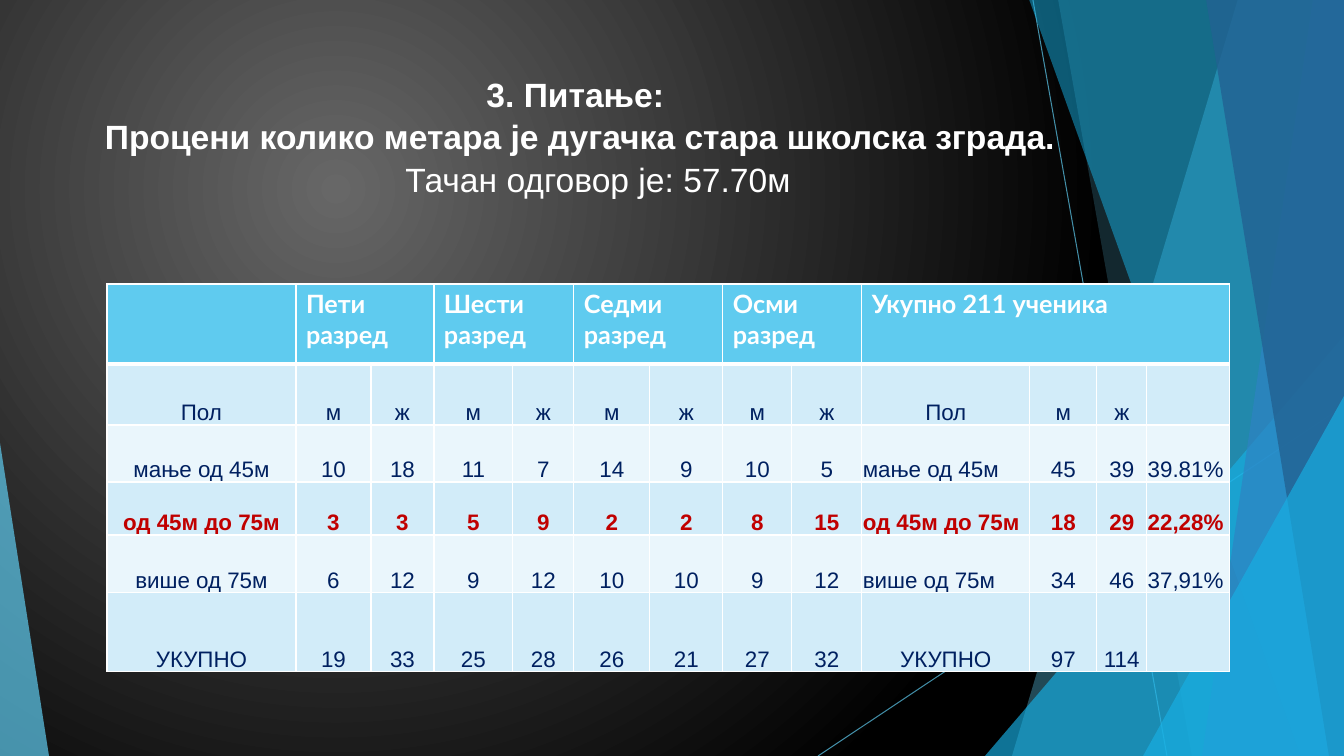
import pptx
import pptx.util
import pptx.dml.color
import pptx.enum.shapes
import pptx.enum.text
import pptx.oxml
import pptx.oxml.ns
from lxml import etree

RGB = pptx.dml.color.RGBColor
WHITE = RGB(0xFF, 0xFF, 0xFF)
BLACK = RGB(0x00, 0x00, 0x00)
GREY = RGB(0x67, 0x67, 0x67)
SKY = RGB(0x5F, 0xCB, 0xEF)
CYAN = RGB(0x17, 0xB0, 0xE4)
BLUE = RGB(0x2E, 0x83, 0xC3)
DEEP = RGB(0x22, 0x62, 0x92)
NAVY = RGB(0x00, 0x20, 0x60)
RED = RGB(0xC0, 0x00, 0x00)
BANDS = RGB(0xEA, 0xF6, 0xFC), RGB(0xD2, 0xEC, 0xF9)

EMU_PER_PX = 914400 / 100.8
WIDTH, HEIGHT = 1344, 756
PT = pptx.util.Pt
ALIGN = pptx.enum.text.PP_ALIGN
ANCHOR = pptx.enum.text.MSO_ANCHOR
qn = pptx.oxml.ns.qn

TITLE_FONT = {"name": "Arial", "size": PT(24)}
HEAD_FONT = {"name": "Lato", "size": PT(18), "bold": True}
BODY_FONT = {"name": "Arial", "size": PT(16)}
BODY_CELL = {"margin_left": 1, "margin_right": 1, "margin_top": 1,
             "margin_bottom": 0, "vertical_anchor": ANCHOR.BOTTOM}

COLUMNS = [189, 75, 63, 79, 61, 76, 73, 69, 70, 168, 67, 50, 83]
ROWS = [80, 61, 57, 53, 58, 79]
# first column, last column, heading
HEADINGS = [(1, 2, "Пети разред"), (3, 4, "Шести разред"),
            (5, 6, "Седми разред"), (7, 8, "Осми разред"),
            (9, 12, "Укупно 211 ученика")]
# label, counts by grade, totals, share
ANSWERS = [
    ("Пол", "м ж м ж м ж м ж", "м ж", ""),
    ("мање од 45м", "10 18 11 7 14 9 10 5", "45 39", "39.81%"),
    ("од 45м до 75м", "3 3 5 9 2 2 8 15", "18 29", "22,28%"),
    ("више од 75м", "6 12 9 12 10 10 9 12", "34 46", "37,91%"),
    ("УКУПНО", "19 33 25 28 26 21 27 32", "97 114", ""),
]
CORRECT_ROW = 3


def px(n):
    return pptx.util.Emu(round(n * EMU_PER_PX))


def set_attrs(obj, values):
    for name, value in values.items():
        setattr(obj, name, value)


def set_alpha(element, percent):
    color = next(element.iter(qn("a:srgbClr")))
    etree.SubElement(color, qn("a:alpha")).set("val", str(percent * 1000))


def paint_background(slide):
    fill = slide.background.fill
    fill.gradient()
    for stop, color in zip(fill.gradient_stops, (GREY, BLACK)):
        stop.color.rgb = color
    lin = next(slide.element.iter(qn("a:lin")))
    lin.getparent().replace(lin, pptx.oxml.parse_xml(
        f'<a:path {pptx.oxml.ns.nsdecls("a")} path="circle"><a:fillToRect '
        'l="50000" t="50000" r="100000" b="100000"/></a:path>'))


def paint_facet(sp, color, opacity):
    sp.shadow.inherit = False
    sp.fill.solid()
    sp.fill.fore_color.rgb = color
    sp.line.fill.background()
    set_alpha(sp.element.spPr, opacity)


def add_ray(slide, x1, y1, x2, y2):
    line = slide.shapes.add_connector(
        pptx.enum.shapes.MSO_CONNECTOR.STRAIGHT, px(x1), px(y1), px(x2), px(y2))
    line.line.color.rgb = SKY
    line.line.width = PT(0.75)
    set_alpha(line.element.spPr, 70)
    etree.SubElement(line.element.spPr, qn("a:effectLst"))


def add_band(slide, top_x, bottom_x, color, opacity):
    """Band from a slanted left edge to the right side of the slide."""
    builder = slide.shapes.build_freeform(top_x, -1, scale=EMU_PER_PX)
    builder.add_line_segments([(WIDTH, -1), (WIDTH, HEIGHT), (bottom_x, HEIGHT)])
    paint_facet(builder.convert_to_shape(), color, opacity)


def add_triangle(slide, x, y, width, apex, color, opacity):
    """Triangle that stands on the bottom of the slide."""
    sp = slide.shapes.add_shape(
        pptx.enum.shapes.MSO_SHAPE.ISOSCELES_TRIANGLE,
        px(x), px(y), px(width), px(HEIGHT - y))
    sp.adjustments[0] = apex
    paint_facet(sp, color, opacity)


def write(p, text, font, color, **extra):
    r = p.add_run()
    r.text = text
    set_attrs(r.font, {**font, **extra})
    r.font.color.rgb = color


def fill_title(slide):
    sp = slide.shapes.title
    set_attrs(sp, {"left": px(75), "top": px(67),
                   "width": px(1010), "height": px(145)})
    tf = sp.text_frame
    set_attrs(tf, {"word_wrap": True, "vertical_anchor": ANCHOR.TOP,
                   "auto_size": pptx.enum.text.MSO_AUTO_SIZE.NONE})
    question, answer = tf.paragraphs[0], tf.add_paragraph()
    for p in (question, answer):
        set_attrs(p, {"alignment": ALIGN.CENTER, "line_spacing": 1.05})
    write(question, "3. Питање: ", TITLE_FONT, WHITE, bold=True)
    question.add_line_break()
    write(question, "Процени колико метара је дугачка стара школска зграда.",
          TITLE_FONT, WHITE, bold=True)
    answer._p.get_or_add_pPr().set("marL", str(px(36)))
    write(answer, "Тачан одговор је: 57.70м", TITLE_FONT, WHITE, bold=False)


def style_cell(cell, color, top, bottom):
    cell.fill.solid()
    cell.fill.fore_color.rgb = color
    tcPr = cell._tc.get_or_add_tcPr()
    for i, (side, width) in enumerate(zip("LRTB", (1, 1, top, bottom))):
        tcPr.insert(i, pptx.oxml.parse_xml(
            f'<a:ln{side} {pptx.oxml.ns.nsdecls("a")} w="{PT(width)}">'
            f'<a:solidFill><a:srgbClr val="{WHITE}"/></a:solidFill></a:ln{side}>'))


def add_results_table(slide):
    table = slide.shapes.add_table(
        len(ROWS), len(COLUMNS), px(107), px(284),
        px(sum(COLUMNS)), px(sum(ROWS))).table
    for column, width in zip(table.columns, COLUMNS):
        column.width = px(width)
    for row, height in zip(table.rows, ROWS):
        row.height = px(height)

    # Header row
    for cell in table.rows[0].cells:
        style_cell(cell, SKY, 1, 3)
    for first, last, heading in HEADINGS:
        cell = table.cell(0, first)
        cell.merge(table.cell(0, last))
        write(cell.text_frame.paragraphs[0], heading, HEAD_FONT, WHITE)

    # Answer rows
    for i, (label, grades, totals, share) in enumerate(ANSWERS, 1):
        texts = [label, *grades.split(), label, *totals.split(), share]
        correct = i == CORRECT_ROW
        for j, text in enumerate(texts):
            cell = table.cell(i, j)
            style_cell(cell, BANDS[i % 2], 3 if i == 1 else 1, 1)
            set_attrs(cell, {name: px(v) if name.startswith("margin") else v
                             for name, v in BODY_CELL.items()})
            p = cell.text_frame.paragraphs[0]
            left = share and j in (9, 12)
            p.alignment = ALIGN.LEFT if left else ALIGN.CENTER
            if text:
                write(p, text, BODY_FONT, RED if correct else NAVY, bold=correct)


def main():
    prs = pptx.Presentation()
    prs.slide_width, prs.slide_height = px(WIDTH), px(HEIGHT)
    slide = prs.slides.add_slide(prs.slide_layouts[5])
    paint_background(slide)

    # Faceted decoration
    add_ray(slide, 1033, 0, 1167, HEIGHT)
    add_ray(slide, WIDTH, 406, 818, HEIGHT)
    add_band(slide, 1238, 1012, SKY, 36)
    add_band(slide, 1058, 1192, SKY, 20)
    add_triangle(slide, 985, 336, 359, 1, CYAN, 66)
    add_band(slide, 1029, 1301, CYAN, 50)
    add_band(slide, 1313, 1202, BLUE, 70)
    add_band(slide, 1206, 1329, DEEP, 80)
    add_triangle(slide, 1143, 396, 201, 1, CYAN, 66)
    add_triangle(slide, 0, 443, 49, 0, SKY, 70)

    # Title in front of the decoration, then the table
    title = slide.shapes.title.element
    title.getparent().append(title)
    fill_title(slide)
    add_results_table(slide)
    prs.save("out.pptx")


if __name__ == "__main__":
    main()
